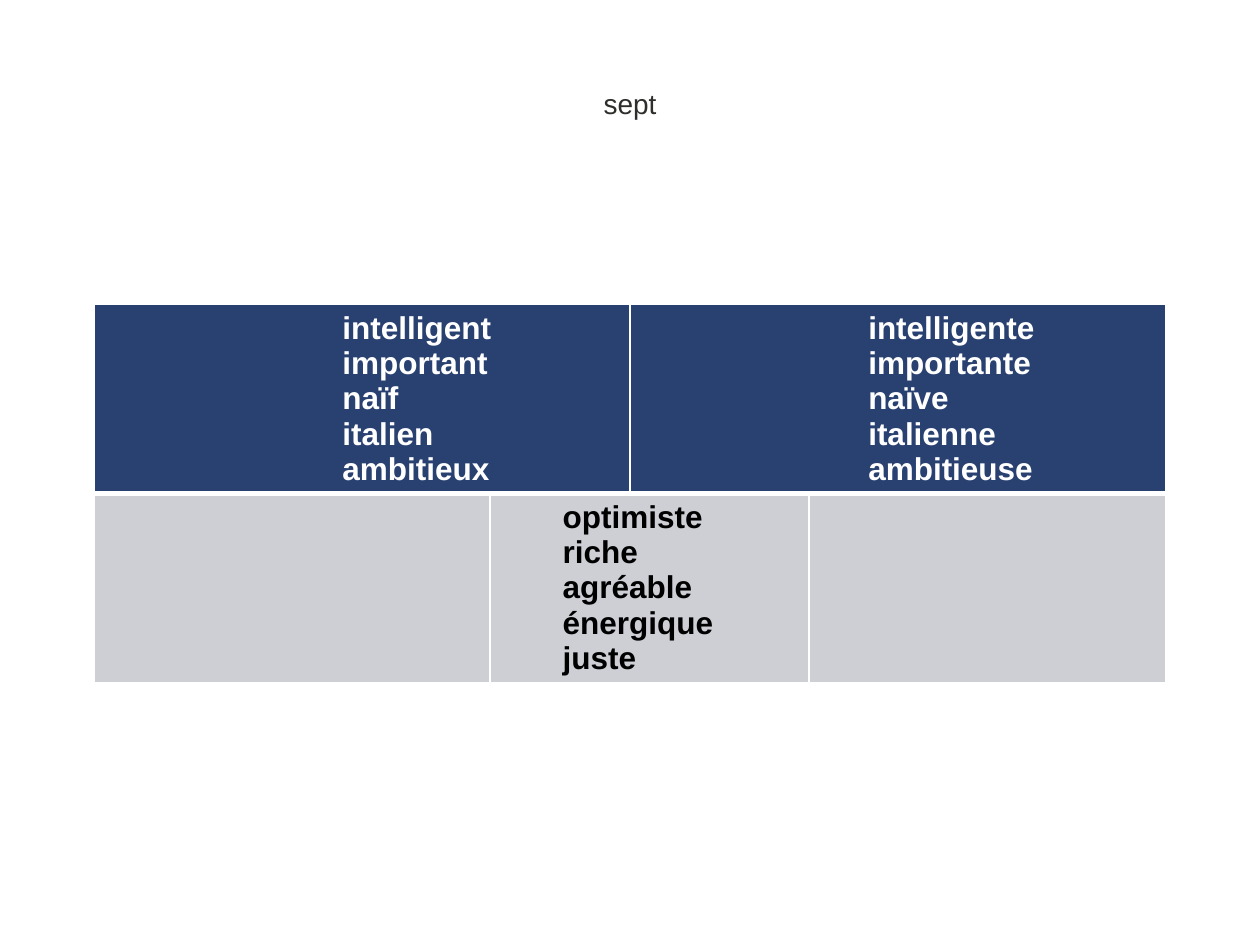
"""Build a slide with a table of French adjectives by gender."""
import pptx
import pptx.dml.color
import pptx.enum.text
import pptx.oxml
import pptx.oxml.ns
import pptx.util
from pptx.util import Cm


def color(value):
    return pptx.dml.color.RGBColor.from_string(value)


def add_border(cell, side, points):
    cell._tc.get_or_add_tcPr().append(pptx.oxml.parse_xml(
        f'<a:ln{side} {pptx.oxml.ns.nsdecls("a")} w="{pptx.util.Pt(points)}">'
        f'<a:solidFill><a:srgbClr val="FFFFFF"/></a:solidFill></a:ln{side}>'))


presentation = pptx.Presentation()
presentation.slide_width = Cm(25.4)
presentation.slide_height = Cm(19.05)
slide = presentation.slides.add_slide(presentation.slide_layouts[5])

title = slide.shapes.title
title_place = {"left": Cm(1.9), "top": Cm(0.18), "width": Cm(21.6), "height": Cm(3.81)}
for name, value in title_place.items():
    setattr(title, name, value)
title.text_frame.text = "sept"
title.text_frame.vertical_anchor = pptx.enum.text.MSO_ANCHOR.MIDDLE
paragraph = title.text_frame.paragraphs[0]
paragraph.alignment = pptx.enum.text.PP_ALIGN.CENTER
title_font = {"name": "Arial", "size": pptx.util.Pt(16), "bold": False}
for name, value in title_font.items():
    setattr(paragraph.font, name, value)
paragraph.font.color.rgb = color("2D2F2B")

column_widths = [7.98, 2.82, 3.61, 7.19]
row_height = 3.79
table = slide.shapes.add_table(
    2, 4, Cm(1.9), Cm(6.14), Cm(sum(column_widths)), Cm(2 * row_height)).table
table.first_row = False
table.horz_banding = False
for column, width in zip(table.columns, column_widths):
    column.width = Cm(width)

row_fills = ["294171", "CDCFD5"]
row_borders = [{"L": 1, "R": 1, "T": 1, "B": 3}, {"L": 1, "R": 1, "T": 3, "B": 1}]
for row, fill, borders in zip(table.rows, row_fills, row_borders):
    row.height = Cm(row_height)
    for cell in row.cells:
        for side, points in borders.items():
            add_border(cell, side, points)
        cell.fill.solid()
        cell.fill.fore_color.rgb = color(fill)

word_lists = [
    (0, 0, 4.75, "FFFFFF", ["intelligent", "important", "naïf", "italien", "ambitieux"]),
    (0, 2, 4.55, "FFFFFF", ["intelligente", "importante", "naïve", "italienne", "ambitieuse"]),
    (1, 1, 1.21, "000000", ["optimiste", "riche", "agréable", "énergique", "juste"]),
]
word_font = {"name": "Arial", "size": pptx.util.Pt(18), "bold": True}
for row_index, column_index, indent, text_color, words in word_lists:
    cell = table.cell(row_index, column_index)
    cell.merge(table.cell(row_index, column_index + 1))
    cell.text_frame.text = "\n".join(words)
    for paragraph in cell.text_frame.paragraphs:
        paragraph._p.get_or_add_pPr().set("marL", str(Cm(indent)))
        for name, value in word_font.items():
            setattr(paragraph.font, name, value)
        paragraph.font.color.rgb = color(text_color)

presentation.save("out.pptx")
